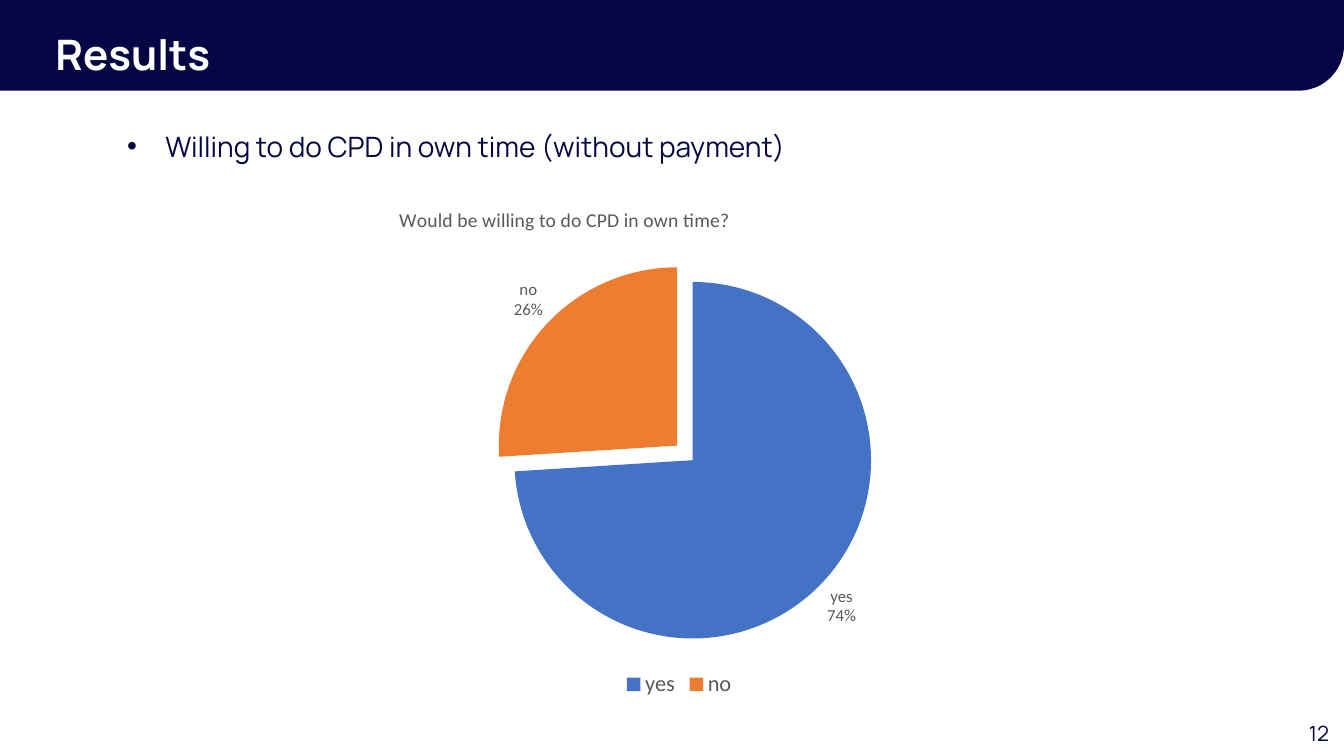
from dataclasses import dataclass

from lxml.etree import SubElement
from pptx import Presentation
from pptx.chart.data import CategoryChartData as ChartData
from pptx.dml.color import RGBColor as RGB
from pptx.enum.chart import XL_CHART_TYPE as Kind
from pptx.enum.chart import XL_LABEL_POSITION as Spot
from pptx.enum.chart import XL_LEGEND_POSITION as Side
from pptx.enum.shapes import MSO_SHAPE as Shape
from pptx.enum.text import MSO_ANCHOR as Anchor
from pptx.enum.text import MSO_AUTO_SIZE as Fit
from pptx.enum.text import PP_ALIGN as Align
from pptx.oxml import parse_xml
from pptx.oxml.ns import nsdecls, qn
from pptx.util import Inches, Pt


@dataclass(frozen=True)
class Theme:
    navy: str = "060645"
    white: str = "FFFFFF"
    grey: str = "595959"
    slices: tuple = ("4472C4", "ED7D31")
    text: str = "Manrope"
    data: str = "Calibri"
    head: int = 30
    body: int = 20
    page: int = 15
    legend: int = 16
    title: int = 14
    label: int = 12


def style(font, name, size, color, bold=False):
    font.name, font.size, font.bold = name, Pt(size), bold
    font.color.rgb = RGB.from_string(color)


def lay(node, **spots):
    """Give a chart part a fixed place, in fractions of the chart."""
    old = node.find(qn("c:layout"))
    at = 0 if old is None else node.index(old)
    if old is not None:
        node.remove(old)
    inner = '<c:layoutTarget val="inner"/>' if "w" in spots else ""
    modes = "".join(f'<c:{k}Mode val="edge"/>' for k in "xy")
    sizes = "".join(f'<c:{k} val="{v}"/>' for k, v in spots.items())
    node.insert(at, parse_xml(
        f'<c:layout {nsdecls("c")}><c:manualLayout>{inner}{modes}{sizes}'
        "</c:manualLayout></c:layout>"))


class Deck:
    def __init__(self, theme):
        self.theme = theme
        self.prs = Presentation()
        self.prs.slide_width = Inches(13.33)
        self.prs.slide_height = Inches(7.5)
        self.slide = self.prs.slides.add_slide(self.prs.slide_layouts[1])

    def place(self, shape, box):
        shape.left, shape.top, shape.width, shape.height = map(Inches, box)

    def fill_text(self, shape, text, size, color, bold=False):
        frame = shape.text_frame
        frame.text = text
        frame.word_wrap = True
        frame.auto_size = Fit.NONE
        frame.vertical_anchor = Anchor.TOP
        para = frame.paragraphs[0]
        style(para.font, self.theme.text, size, color, bold)
        return para

    def banner(self, box):
        shape = self.slide.shapes.add_shape(
            Shape.ROUND_1_RECTANGLE, *map(Inches, box))
        shape.adjustments[0] = 0.5
        shape.shadow.inherit = False
        shape.fill.solid()
        shape.fill.fore_color.rgb = RGB.from_string(self.theme.navy)
        shape.line.fill.background()
        node = shape._element
        node.spPr.find(qn("a:xfrm")).set("flipV", "1")
        node.getparent().insert(2, node)  # behind the title

    def title(self, text, box):
        shape = self.slide.shapes.title
        self.place(shape, box)
        para = self.fill_text(
            shape, text, self.theme.head, self.theme.white, True)
        para.alignment = Align.LEFT
        para.line_spacing = 1.1
        para.space_before = Pt(10)

    def bullet(self, text, box):
        shape = self.slide.placeholders[1]
        self.place(shape, box)
        para = self.fill_text(shape, text, self.theme.body, self.theme.navy)
        para.line_spacing = 1.1
        para.space_before, para.space_after = Pt(0), Pt(6)
        props = para._p.get_or_add_pPr()
        props.set("marL", str(Inches(0.38)))
        props.set("indent", str(Inches(-0.38)))
        mark = parse_xml(f'<a:buChar {nsdecls("a")} char="•"/>')
        props.insert(props.index(props.find(qn("a:defRPr"))), mark)

    def number(self, text, box):
        shape = self.slide.shapes.add_textbox(*map(Inches, box))
        para = self.fill_text(shape, text, self.theme.page, self.theme.navy)
        para.alignment = Align.RIGHT

    def pie(self, name, shares, box):
        look = self.theme
        data = ChartData()
        data.categories = list(shares)
        data.add_series(name, shares.values())
        chart = self.slide.shapes.add_chart(
            Kind.PIE, *map(Inches, box), data).chart
        chart.font.name = look.data

        chart.has_title = True
        frame = chart.chart_title.text_frame
        frame.text = name
        style(frame.paragraphs[0].font, look.data, look.title, look.grey)
        lay(chart.chart_title._element, x=0.19, y=0.02)
        area = chart._chartSpace.chart.plotArea
        lay(area, x=0.32, y=0.17, w=0.39, h=0.71)

        chart.has_legend = True
        chart.legend.position = Side.BOTTOM
        chart.legend.include_in_layout = False
        style(chart.legend.font, look.data, look.legend, look.grey)

        plot = chart.plots[0]
        plot.vary_by_categories = True
        series = plot.series[0]
        for i, color in enumerate(look.slices):
            fill = series.points[i].format.fill
            fill.solid()
            fill.fore_color.rgb = RGB.from_string(color)
        self.pull(series, 1, 12)

        labels = series.data_labels
        labels.show_value = False
        labels.show_percentage = labels.show_category_name = True
        labels.position = Spot.OUTSIDE_END
        style(labels.font, look.data, look.label, look.grey)
        gap = SubElement(labels._element, qn("c:separator"))
        gap.text = "\n"
        labels._element.find(qn("c:showBubbleSize")).addnext(gap)

    def pull(self, series, i, share):
        """Move one slice out of the pie by a percentage of its radius."""
        point = series._element.findall(qn("c:dPt"))[i]
        move = parse_xml(f'<c:explosion {nsdecls("c")} val="{share}"/>')
        point.find(qn("c:spPr")).addprevious(move)


def main():
    deck = Deck(Theme())
    deck.banner((-0.01, 0, 13.34, 0.9))
    deck.title("Results", (0.45, 0.18, 11.77, 0.54))
    deck.bullet("Willing to do CPD in own time (without payment)",
                (1.16, 1.2, 12.17, 5.99))
    deck.pie("Would be willing to do CPD in own time?",
             {"yes": 74, "no": 26}, (2.2, 1.91, 9.07, 5.06))
    deck.number("12", (12.59, 7.1, 0.69, 0.35))
    deck.prs.save("out.pptx")


if __name__ == "__main__":
    main()
